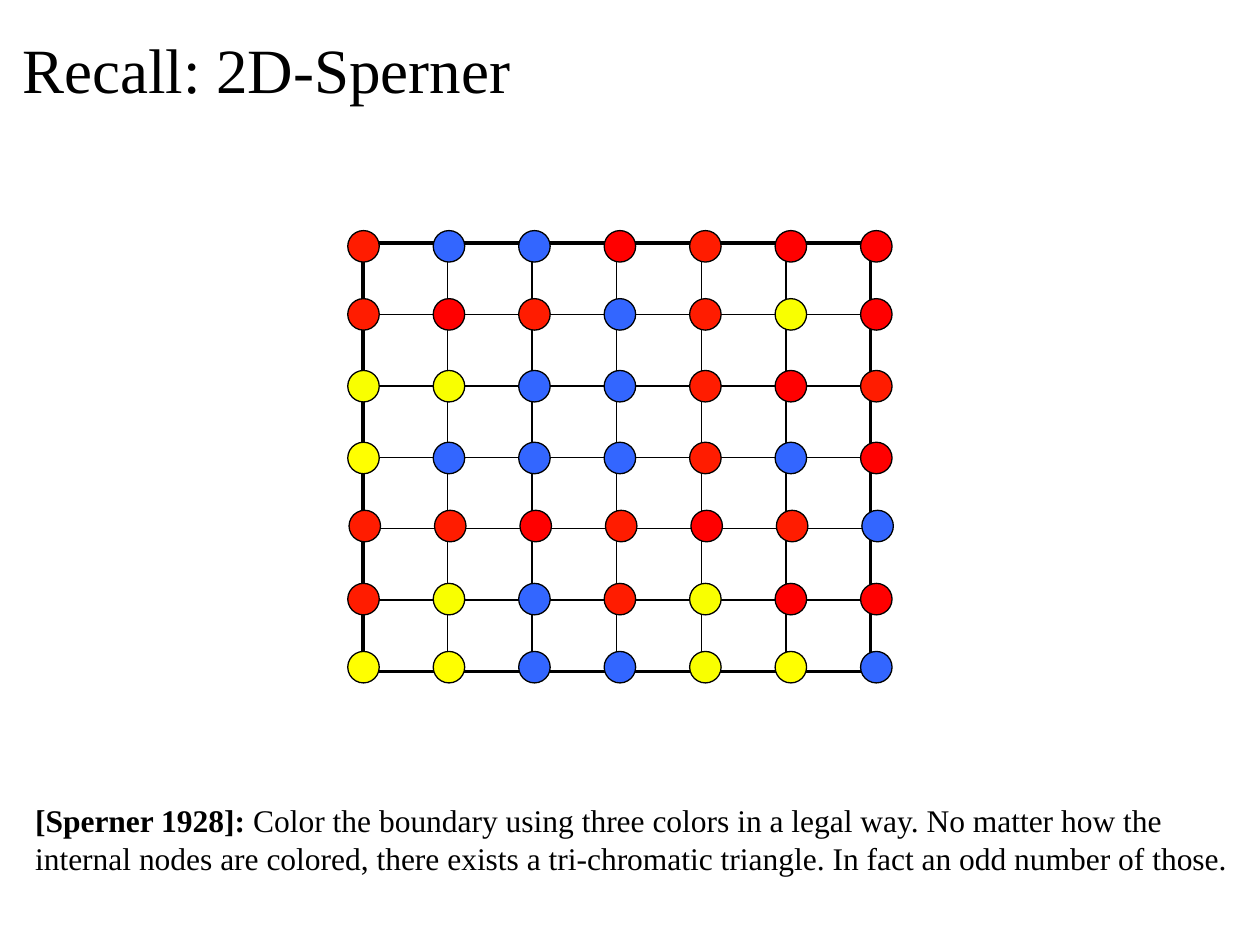
from lxml.etree import SubElement
from pptx import Presentation
from pptx.dml.color import RGBColor
from pptx.enum.shapes import MSO_SHAPE as Shape
from pptx.enum.text import MSO_ANCHOR as Anchor, PP_ALIGN as Align
from pptx.oxml.ns import qn
from pptx.util import Inches, Pt

# Content
TITLE = "Recall: 2D-Sperner"
THEOREM = [
    ("[Sperner 1928]:", True),
    (" Color the boundary using three colors in a legal way. No matter how the "
     "internal nodes are colored, there exists a tri-chromatic triangle. "
     "In fact an odd number of those.", False),
]
# Each row of nodes: left, top, one colour letter per node
NODE_ROWS = [
    (2.76, 1.83, "OBBRORR"),
    (2.76, 2.37, "OROBOLR"),
    (2.76, 2.94, "LLBBORO"),
    (2.76, 3.51, "YBBBOBR"),
    (2.77, 4.05, "OOROROB"),
    (2.76, 4.63, "OLBOLRR"),
    (2.76, 5.17, "YYBBLYB"),
]

# Style
FONT = "Times New Roman"
BLACK = RGBColor(0, 0, 0)
NODE_COLORS = {
    "R": RGBColor(0xFF, 0x00, 0x00),
    "O": RGBColor(0xFF, 0x1C, 0x00),
    "B": RGBColor(0x33, 0x66, 0xFF),
    "Y": RGBColor(0xFF, 0xFF, 0x00),
    "L": RGBColor(0xF9, 0xFF, 0x00),
}
CELLS = 6
GRID = (2.88, 1.93, 4.03, 3.4)
NODE_SIZE = 0.25
NODE_STEP = 4.07 / CELLS
THIN, THICK = 1, 2.25


def place(shape, left, top, width, height):
    shape.left, shape.top = Inches(left), Inches(top)
    shape.width, shape.height = Inches(width), Inches(height)


def add_span(para, text, size, bold=False):
    span = para.add_run()
    span.text = text
    for name, value in {"name": FONT, "size": Pt(size), "bold": bold}.items():
        setattr(span.font, name, value)
    span.font.color.rgb = BLACK


def set_borders(cell, widths):
    properties = cell._tc.get_or_add_tcPr()
    for side, width in widths.items():
        line = SubElement(properties, qn(f"a:ln{side}"), w=str(Pt(width)))
        fill = SubElement(line, qn("a:solidFill"))
        SubElement(fill, qn("a:srgbClr"), val=str(BLACK))


def add_title(page):
    title = page.shapes.title
    place(title, 0.08, -0.08, 9.58, 1.25)
    title.text_frame.vertical_anchor = Anchor.MIDDLE
    para = title.text_frame.paragraphs[0]
    para.alignment = Align.LEFT
    add_span(para, TITLE, 36)


def add_grid(page):
    table = page.shapes.add_table(CELLS, CELLS, *map(Inches, GRID)).table
    table.first_row = table.horz_banding = False
    last = CELLS - 1
    for r in range(CELLS):
        for c in range(CELLS):
            outer = {"L": c == 0, "R": c == last, "T": r == 0, "B": r == last}
            cell = table.cell(r, c)
            set_borders(cell, {side: THICK if edge else THIN
                               for side, edge in outer.items()})
            cell.fill.background()


def add_nodes(page):
    for left, top, letters in NODE_ROWS:
        for column, letter in enumerate(letters):
            node = page.shapes.add_shape(
                Shape.OVAL, Inches(left + column * NODE_STEP), Inches(top),
                Inches(NODE_SIZE), Inches(NODE_SIZE))
            node.shadow.inherit = False
            node.fill.solid()
            node.fill.fore_color.rgb = NODE_COLORS[letter]
            node.line.color.rgb = BLACK
            node.line.width = Pt(0.75)


def add_theorem(page):
    box = page.shapes.add_textbox(*map(Inches, (0.18, 6.31, 9.82, 0.71)))
    box.text_frame.word_wrap = True
    para = box.text_frame.paragraphs[0]
    for text, bold in THEOREM:
        add_span(para, text, 18, bold)


def main():
    deck = Presentation()
    deck.slide_width, deck.slide_height = Inches(10), Inches(7.5)
    page = deck.slides.add_slide(deck.slide_layouts[5])
    add_title(page)
    add_grid(page)
    add_nodes(page)
    add_theorem(page)
    deck.save("out.pptx")


if __name__ == "__main__":
    main()
